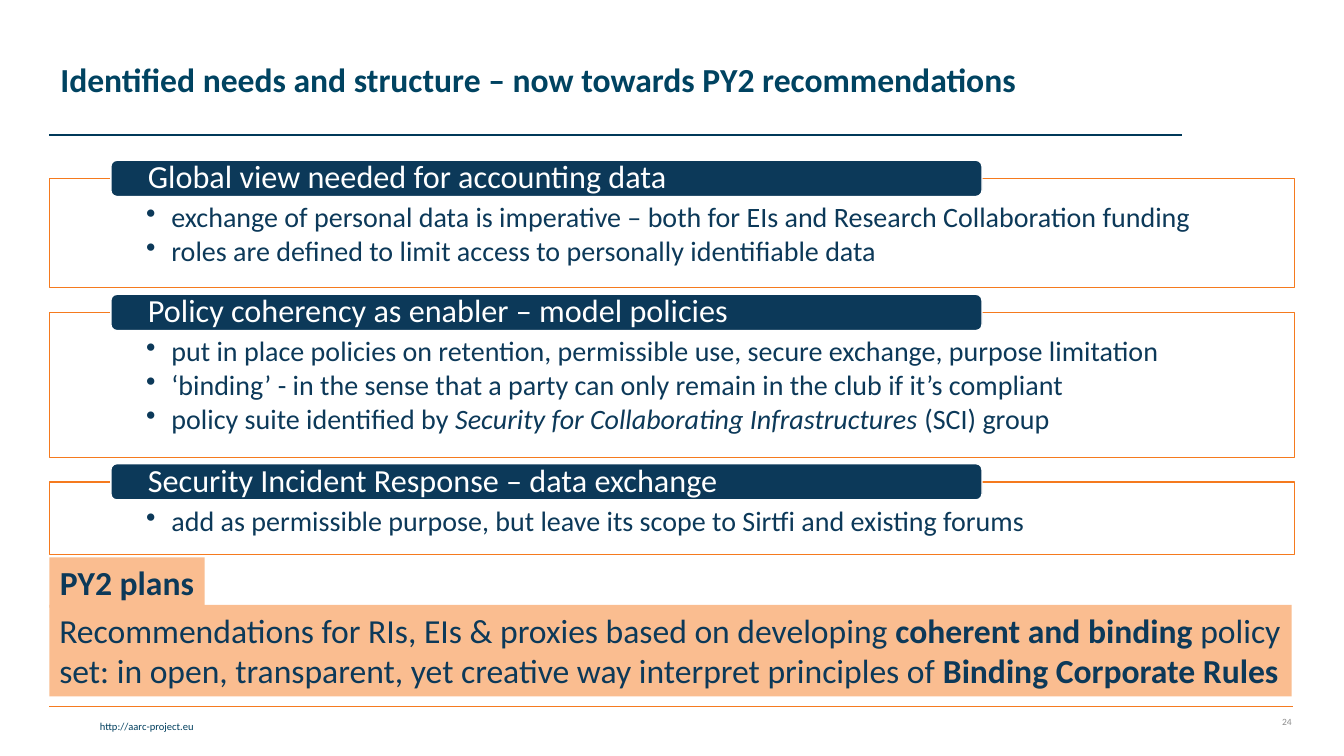
from dataclasses import dataclass

from lxml import etree
from pptx import Presentation
from pptx.dml.color import RGBColor
from pptx.enum.shapes import MSO_CONNECTOR, MSO_SHAPE
from pptx.enum.text import MSO_ANCHOR, PP_ALIGN
from pptx.oxml.ns import qn
from pptx.util import Pt

EMU_PER_PX = 9144
LEFT, CENTER, RIGHT = PP_ALIGN.LEFT, PP_ALIGN.CENTER, PP_ALIGN.RIGHT
TOP, MIDDLE = MSO_ANCHOR.TOP, MSO_ANCHOR.MIDDLE
RECT, ROUNDED = MSO_SHAPE.RECTANGLE, MSO_SHAPE.ROUNDED_RECTANGLE
STRAIGHT = MSO_CONNECTOR.STRAIGHT


@dataclass(frozen=True)
class Theme:
    font: str = "Calibri"
    navy: str = "0C3959"
    rule_navy: str = "003959"
    title_teal: str = "004361"
    link_teal: str = "003F5E"
    grey: str = "8C8C8C"
    white: str = "FFFFFF"
    frame_orange: str = "F57A1E"
    rule_orange: str = "F57B20"
    peach: str = "FABD90"
    large_size: float = 24
    heading_size: float = 23
    bullet_size: float = 20
    link_size: float = 7.5
    number_size: float = 6.8


@dataclass(frozen=True)
class Box:
    left: int
    top: int
    width: int
    height: int


@dataclass(frozen=True)
class Run:
    text: str
    bold: bool = False
    italic: bool = False


@dataclass(frozen=True)
class Style:
    size: float
    color: str
    align: PP_ALIGN = LEFT
    anchor: MSO_ANCHOR = TOP
    insets: tuple[int, int, int, int] = (10, 5, 10, 5)
    line_spacing: float = 1.0
    space_after: float = 0
    bulleted: bool = False
    wrap: bool = True


@dataclass(frozen=True)
class Topic:
    heading: str
    top: int
    height: int
    points: tuple[tuple[Run, ...], ...]


THEME = Theme()
HEADING = Style(THEME.heading_size, THEME.white, anchor=MIDDLE,
                insets=(35, 0, 35, 0), line_spacing=0.9)
BULLETS = Style(THEME.bullet_size, THEME.navy, insets=(96, 25, 96, 16),
                line_spacing=0.9, space_after=2.5, bulleted=True)
TOPICS = (
    Topic("Global view needed for accounting data", 177, 108, (
        (Run("exchange of personal data is imperative – both for EIs and "
             "Research Collaboration funding"),),
        (Run("roles are defined to limit access to personally identifiable data"),),
    )),
    Topic("Policy coherency as enabler – model policies", 310, 144, (
        (Run("put in place policies on retention, permissible use, secure "
             "exchange, purpose limitation"),),
        (Run("‘binding’ - in the sense that a party can only remain in the "
             "club if it’s compliant"),),
        (Run("policy suite identified by "),
         Run("Security for Collaborating Infrastructures ", italic=True),
         Run("(SCI) group")),
    )),
    Topic("Security Incident Response – data exchange", 478, 72, (
        (Run("add as permissible purpose, but leave its scope to Sirtfi and "
             "existing forums"),),
    )),
)


def px(length: int) -> int:
    """Convert px to EMU."""
    return length * EMU_PER_PX


def place(box: Box) -> tuple[int, int, int, int]:
    """Give the EMU position and size of a box."""
    return px(box.left), px(box.top), px(box.width), px(box.height)


def write(frame, paragraphs: tuple[tuple[Run, ...], ...], style: Style) -> None:
    """Fill a text frame run by run."""
    frame.word_wrap = style.wrap
    frame.vertical_anchor = style.anchor
    (frame.margin_left, frame.margin_top,
     frame.margin_right, frame.margin_bottom) = map(px, style.insets)
    for index, runs in enumerate(paragraphs):
        paragraph = frame.add_paragraph() if index else frame.paragraphs[0]
        paragraph.alignment = style.align
        paragraph.line_spacing = style.line_spacing
        paragraph.space_before = Pt(0)
        paragraph.space_after = Pt(style.space_after)
        if style.bulleted:
            properties = paragraph._p.get_or_add_pPr()
            properties.set("marL", str(px(25)))
            properties.set("indent", str(px(-25)))
            etree.SubElement(properties, qn("a:buChar")).set("char", "•")
        for part in runs:
            run = paragraph.add_run()
            run.text = part.text
            run.font.name = THEME.font
            run.font.size = Pt(style.size)
            run.font.bold = part.bold
            run.font.italic = part.italic
            run.font.color.rgb = RGBColor.from_string(style.color)


def add_label(slide, box: Box, run: Run, style: Style) -> None:
    """Add a one-line text box."""
    write(slide.shapes.add_textbox(*place(box)).text_frame, ((run,),), style)


def add_panel(slide, preset: MSO_SHAPE, box: Box, fill: str,
              outline: str | None, paragraphs: tuple[tuple[Run, ...], ...],
              style: Style, opacity: int = 100) -> None:
    """Add a filled shape with text."""
    panel = slide.shapes.add_shape(preset, *place(box))
    panel.shadow.inherit = False
    panel.fill.solid()
    panel.fill.fore_color.rgb = RGBColor.from_string(fill)
    if opacity < 100:
        color = panel._element.spPr.find(qn("a:solidFill"))[0]
        etree.SubElement(color, qn("a:alpha")).set("val", str(opacity * 1000))
    if outline:
        panel.line.color.rgb = RGBColor.from_string(outline)
        panel.line.width = Pt(1)
    else:
        panel.line.fill.background()
    write(panel.text_frame, paragraphs, style)


def add_rule(slide, left: int, right: int, y: int, color: str) -> None:
    """Add a thin horizontal rule."""
    rule = slide.shapes.add_connector(STRAIGHT, px(left), px(y), px(right), px(y))
    rule.line.color.rgb = RGBColor.from_string(color)
    rule.line.width = Pt(1)
    etree.SubElement(rule._element.spPr, qn("a:effectLst"))


def add_topic(slide, topic: Topic) -> None:
    """Add a bullet frame with its heading bar across the top edge."""
    add_panel(slide, RECT, Box(49, topic.top, 1235, topic.height), THEME.white,
              THEME.frame_orange, topic.points, BULLETS, opacity=90)
    add_panel(slide, ROUNDED, Box(110, topic.top - 18, 864, 36), THEME.navy,
              THEME.white, ((Run(topic.heading),),), HEADING)


def main() -> None:
    """Build the slide and save it."""
    deck = Presentation()
    deck.slide_width, deck.slide_height = px(1333), px(750)
    slide = deck.slides.add_slide(deck.slide_layouts[6])
    add_rule(slide, 49, 1282, 701, THEME.rule_orange)
    add_label(slide, Box(3, 709, 199, 23), Run("http://aarc-project.eu"),
              Style(THEME.link_size, THEME.link_teal, align=RIGHT))
    add_label(slide, Box(1210, 701, 81, 30), Run("24"),
              Style(THEME.number_size, THEME.grey, align=RIGHT, anchor=MIDDLE))
    add_rule(slide, 49, 1172, 134, THEME.rule_navy)
    add_label(slide, Box(50, 8, 1051, 145),
              Run("Identified needs and structure – now towards PY2 "
                  "recommendations", bold=True),
              Style(THEME.large_size, THEME.title_teal, anchor=MIDDLE,
                    line_spacing=0.9))
    for topic in TOPICS:
        add_topic(slide, topic)
    plan = (
        Run("Recommendations for RIs, EIs & proxies based on developing "),
        Run("coherent and binding ", bold=True),
        Run("policy set: in open, transparent, yet creative way interpret "
            "principles of"),
        Run(" Binding Corporate Rules", bold=True),
    )
    add_panel(slide, RECT, Box(49, 600, 1232, 91), THEME.peach, None, (plan,),
              Style(THEME.large_size, THEME.navy))
    add_panel(slide, RECT, Box(49, 553, 154, 50), THEME.peach, None,
              ((Run("PY2 plans", bold=True),),),
              Style(THEME.large_size, THEME.navy, align=CENTER, wrap=False))
    deck.save("out.pptx")


if __name__ == "__main__":
    main()
